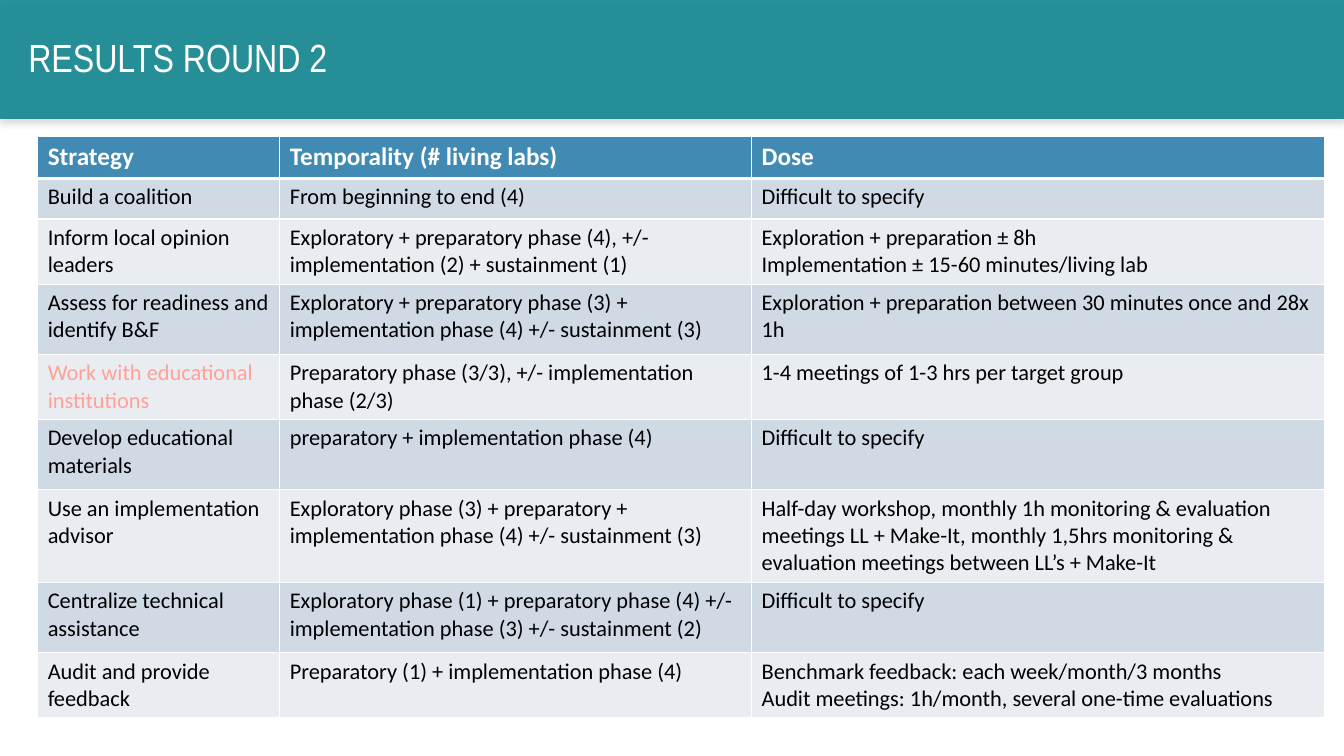
from lxml import etree
from pptx import Presentation
from pptx.dml.color import RGBColor
from pptx.enum import shapes, text
from pptx.oxml import ns
from pptx.util import Cm, Pt

TITLE = "RESULTS ROUND 2"
HEADER = ("Strategy", "Temporality (# living labs)", "Dose")
STRATEGIES = [
    ("Build a coalition", "From beginning to end (4)", "Difficult to specify"),
    ("Inform local opinion leaders",
     "Exploratory + preparatory phase (4), +/- implementation (2) + sustainment (1)",
     "Exploration + preparation ± 8h\nImplementation ± 15-60 minutes/living lab"),
    ("Assess for readiness and identify B&F",
     "Exploratory + preparatory phase (3) + implementation phase (4) +/- sustainment (3)",
     "Exploration + preparation between 30 minutes once and 28x 1h"),
    ("Work with educational institutions",
     "Preparatory phase (3/3), +/- implementation phase (2/3)",
     "1-4 meetings of 1-3 hrs per target group"),
    ("Develop educational materials", "preparatory + implementation phase (4)",
     "Difficult to specify"),
    ("Use an implementation advisor",
     "Exploratory phase (3) + preparatory + implementation phase (4) +/- sustainment (3)",
     "Half-day workshop, monthly 1h monitoring & evaluation meetings LL + Make-It, "
     "monthly 1,5hrs monitoring & evaluation meetings between LL’s + Make-It"),
    ("Centralize technical assistance",
     "Exploratory phase (1) + preparatory phase (4) +/- implementation phase (3) "
     "+/- sustainment (2)",
     "Difficult to specify"),
    ("Audit and provide feedback", "Preparatory (1) + implementation phase (4)",
     "Benchmark feedback: each week/month/3 months\n"
     "Audit meetings: 1h/month, several one-time evaluations"),
]
HIGHLIGHTED = "Work with educational institutions"
COLUMN_WIDTHS = (6.1, 11.89, 14.43)
ROW_HEIGHTS = (1.06, 1.02, 1.64, 1.77, 1.64, 1.77, 2.34, 1.77, 1.62)

WHITE = RGBColor(0xFF, 0xFF, 0xFF)
BLACK = RGBColor(0, 0, 0)
TEAL = RGBColor(0x11, 0x86, 0x90)
SHADOW_GREY = RGBColor(0xA6, 0xA6, 0xA6)
HEADER_BLUE = RGBColor(0x41, 0x8A, 0xB3)
ROW_COLOURS = (RGBColor(0xCF, 0xDA, 0xE5), RGBColor(0xE9, 0xED, 0xF2))
SALMON = RGBColor(0xFF, 0xA1, 0x97)


def add_child(parent, tag, **attributes):
    """Append a DrawingML element with the given attributes."""
    values = {name: str(value) for name, value in attributes.items()}
    return etree.SubElement(parent, ns.qn(tag), values)


def add_run(paragraph, words, font, size, colour, bold=False):
    """Add one formatted run to a paragraph."""
    run = paragraph.add_run()
    run.text = words
    run.font.name = font
    run.font.size = Pt(size)
    run.font.bold = bold
    run.font.color.rgb = colour


def add_band(slide, width):
    """Draw the translucent title band behind the title."""
    band = slide.shapes.add_shape(shapes.MSO_SHAPE.RECTANGLE, 0, 0, width, Cm(3))
    band.fill.solid()
    band.fill.fore_color.rgb = TEAL
    band.line.fill.background()
    properties = band.element.spPr
    add_child(properties.find(".//" + ns.qn("a:srgbClr")), "a:alpha", val=90000)
    effects = add_child(properties, "a:effectLst")
    shadow = add_child(effects, "a:outerShdw", blurRad=Pt(4), dist=Pt(3),
                       dir=5400000, algn="t", rotWithShape=0)
    tint = add_child(shadow, "a:srgbClr", val=SHADOW_GREY)
    add_child(tint, "a:alpha", val=40000)
    slide.shapes.title.element.addprevious(band.element)


def fill_title(title):
    """Place and format the slide title."""
    title.left, title.top, title.width, title.height = Cm(0.46), Cm(0.33), Cm(29.21), Cm(2.34)
    frame = title.text_frame
    frame.auto_size = text.MSO_AUTO_SIZE.NONE
    frame.word_wrap = True
    frame.vertical_anchor = text.MSO_ANCHOR.MIDDLE
    paragraph = frame.paragraphs[0]
    paragraph.alignment = text.PP_ALIGN.LEFT
    paragraph.line_spacing = 0.9
    add_run(paragraph, TITLE, "Arial Narrow", 28, WHITE)


def fill_cell(cell, words, row):
    """Write one cell with its borders, fill and text."""
    is_header = row == 0
    properties = cell._tc.get_or_add_tcPr()
    weights = {"L": 1, "R": 1, "T": 3 if row == 1 else 1, "B": 3 if is_header else 1}
    for side, weight in weights.items():
        border = add_child(properties, f"a:ln{side}", w=Pt(weight))
        add_child(add_child(border, "a:solidFill"), "a:srgbClr", val=WHITE)
    cell.fill.solid()
    cell.fill.fore_color.rgb = HEADER_BLUE if is_header else ROW_COLOURS[(row - 1) % 2]
    colour = WHITE if is_header else SALMON if words == HIGHLIGHTED else BLACK
    for index, line in enumerate(words.split("\n")):
        frame = cell.text_frame
        paragraph = frame.add_paragraph() if index else frame.paragraphs[0]
        add_run(paragraph, line, "Calibri", 18 if is_header else 16, colour, is_header)


def add_results(slide):
    """Build the table of strategies."""
    rows = [HEADER, *STRATEGIES]
    results = slide.shapes.add_table(
        len(rows), len(HEADER), Cm(0.95), Cm(3.44),
        Cm(sum(COLUMN_WIDTHS)), Cm(sum(ROW_HEIGHTS))).table
    for column, width in zip(results.columns, COLUMN_WIDTHS):
        column.width = Cm(width)
    for row, (entries, height) in enumerate(zip(rows, ROW_HEIGHTS)):
        results.rows[row].height = Cm(height)
        for column, words in enumerate(entries):
            fill_cell(results.cell(row, column), words, row)


def main():
    """Build and save the results slide."""
    deck = Presentation()
    deck.slide_width, deck.slide_height = Cm(33.87), Cm(19.05)
    slide = deck.slides.add_slide(deck.slide_layouts[5])
    add_band(slide, deck.slide_width)
    fill_title(slide.shapes.title)
    add_results(slide)
    deck.save("out.pptx")


if __name__ == "__main__":
    main()
